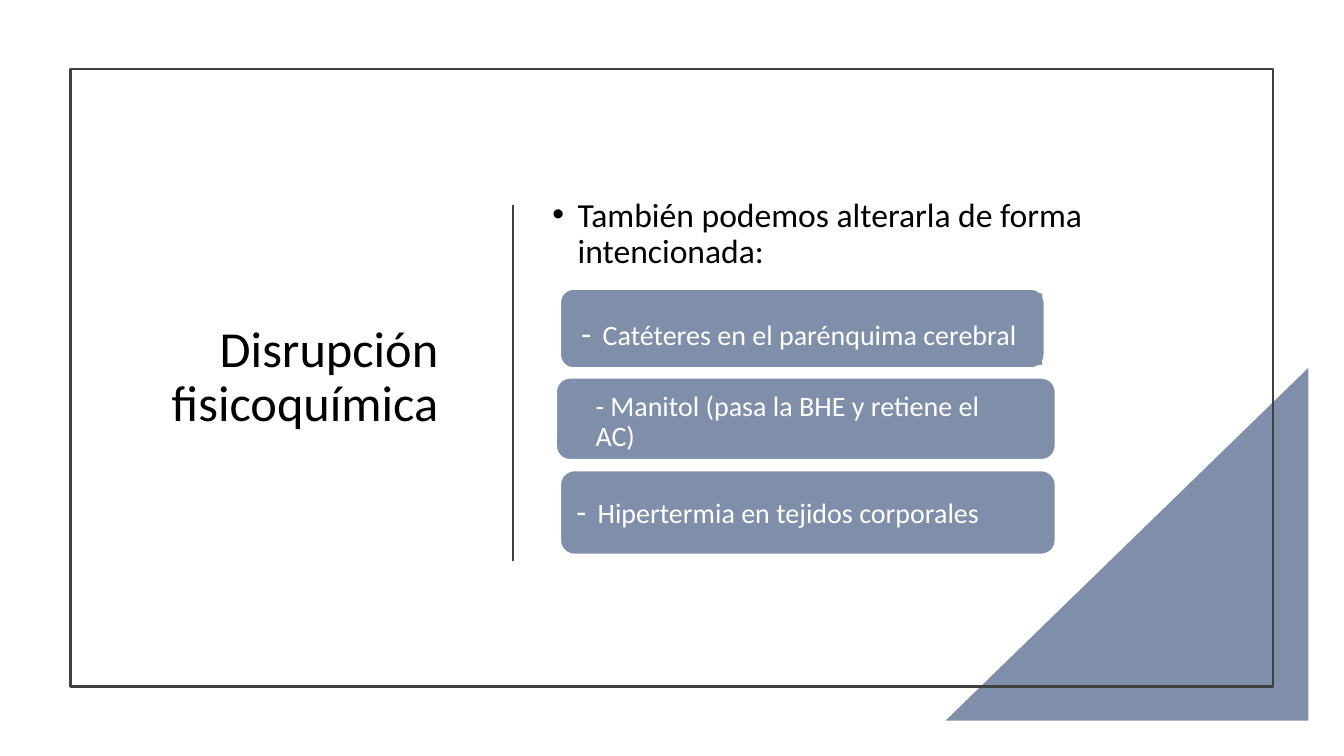
import pptx
import pptx.util
import pptx.dml.color
import pptx.enum.shapes
import pptx.enum.text
import pptx.oxml.ns
import lxml.etree
from dataclasses import dataclass

Pt = pptx.util.Pt
Kind = pptx.enum.shapes.MSO_SHAPE
Align = pptx.enum.text.PP_ALIGN
Middle = pptx.enum.text.MSO_ANCHOR.MIDDLE

TITLE = "Disrupción fisicoquímica"
INTRO = "También podemos alterarla de forma intencionada:"
METHODS = [
    {"card": (400.3, 206.6, 345.6, 56.2), "label": (408.2, 209.5, 336.2, 51.1),
     "dash": True, "text": "Catéteres en el parénquima cerebral"},
    {"card": (397.4, 270, 356.4, 58.3), "label": (418.3, 278.6, 321.1, 46.1),
     "dash": False, "text": "- Manitol (pasa la BHE y retiene el AC)"},
    {"card": (400.3, 336.2, 353.5, 59.8), "label": (404.6, 339.1, 334.1, 46.1),
     "dash": True, "text": "Hipertermia en tejidos corporales"},
]


@dataclass
class Theme:
    font: str = "Calibri"
    blue: str = "7F8FA9"
    dark: str = "404040"
    black: str = "000000"
    white: str = "FFFFFF"
    title: int = 36
    body: int = 24
    label: int = 20
    dash: int = 23
    gap: int = 36
    rule: float = 1.5
    edge: float = 1
    inset: float = 7.2


theme = Theme()


def color(code):
    return pptx.dml.color.RGBColor.from_string(code)


def points(box):
    return [Pt(v) for v in box]


def place(shape, box):
    shape.left, shape.top, shape.width, shape.height = points(box)


def stroke(line, code, width):
    line.color.rgb = color(code)
    line.width = Pt(width)


def draw(slide, kind, box, fill=None, line=None, width=1):
    shape = slide.shapes.add_shape(kind, *points(box))
    shape.shadow.inherit = False
    if fill:
        shape.fill.solid()
        shape.fill.fore_color.rgb = color(fill)
    else:
        shape.fill.background()
    if line:
        stroke(shape.line, line, width)
    else:
        shape.line.fill.background()
    return shape


def write(shape, runs, ink, align):
    frame = shape.text_frame
    frame.word_wrap = True
    frame.auto_size = pptx.enum.text.MSO_AUTO_SIZE.NONE
    frame.vertical_anchor = Middle
    para = frame.paragraphs[0]
    para.alignment = align
    para.line_spacing = 0.9
    for text, size in runs:
        run = para.add_run()
        run.text = text
        run.font.name = theme.font
        run.font.size = Pt(size)
        run.font.color.rgb = color(ink)
    return para


def frame_page(slide):
    corner = draw(slide, Kind.RIGHT_TRIANGLE, (675.4, 262.8, 259.2, 252), theme.blue)
    corner._element.spPr.xfrm.set("flipH", "1")
    draw(slide, Kind.RECTANGLE, (50.4, 49, 859, 441.4), None, theme.dark, theme.rule)
    ends = points((366.5, 146.2, 366.5, 401))
    rule = slide.shapes.add_connector(pptx.enum.shapes.MSO_CONNECTOR.STRAIGHT, *ends)
    stroke(rule.line, theme.dark, theme.rule)
    lxml.etree.SubElement(rule._element.spPr, pptx.oxml.ns.qn("a:effectLst"))


def fill_text(slide):
    title, body = slide.placeholders
    place(title, (85, 93.6, 235.4, 352.8))
    write(title, [(TITLE, theme.title)], theme.black, Align.RIGHT)
    place(body, (387.4, 45.4, 466.6, 280.1))
    para = write(body, [(INTRO, theme.body)], theme.black, Align.LEFT)
    body.text_frame.margin_bottom = Pt(39.6)
    para.space_before = Pt(10)
    props = para._p.get_or_add_pPr()
    props.set("marL", str(Pt(18)))
    props.set("indent", str(-Pt(18)))


def add_card(slide, item):
    draw(slide, Kind.ROUNDED_RECTANGLE, item["card"], theme.blue, theme.white, theme.edge)
    label = draw(slide, Kind.RECTANGLE, item["label"], theme.blue)
    frame = label.text_frame
    frame.margin_left = frame.margin_right = Pt(theme.inset)
    frame.margin_top = frame.margin_bottom = Pt(theme.inset)
    lead = [("-", theme.dash), (" ", theme.gap)] if item["dash"] else []
    write(label, lead + [(item["text"], theme.label)], theme.white, Align.LEFT)


def main():
    deck = pptx.Presentation()
    deck.slide_width, deck.slide_height = Pt(960), Pt(540)
    slide = deck.slides.add_slide(deck.slide_layouts[1])
    frame_page(slide)
    fill_text(slide)
    for item in METHODS:
        add_card(slide, item)
    deck.save("out.pptx")


if __name__ == "__main__":
    main()
